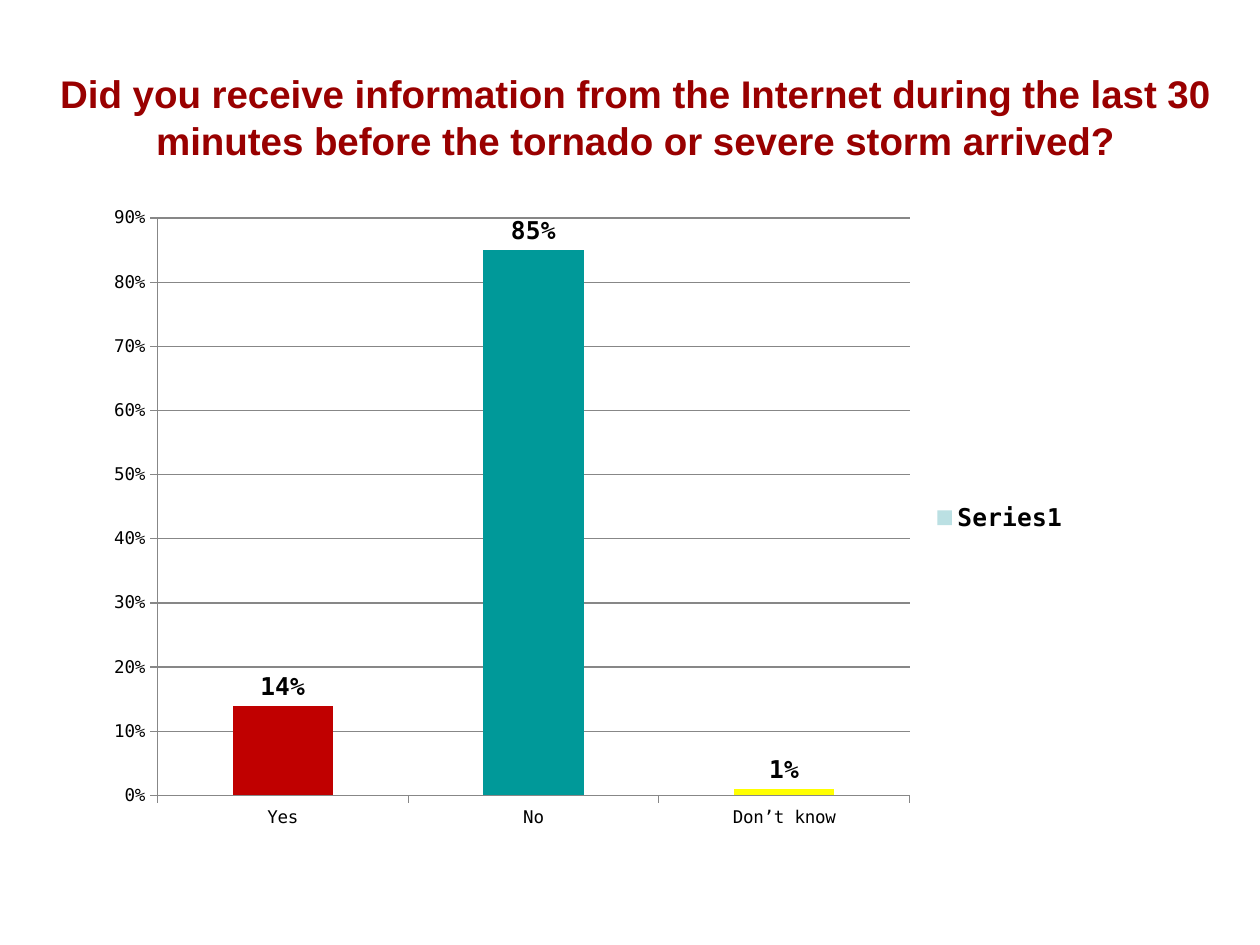
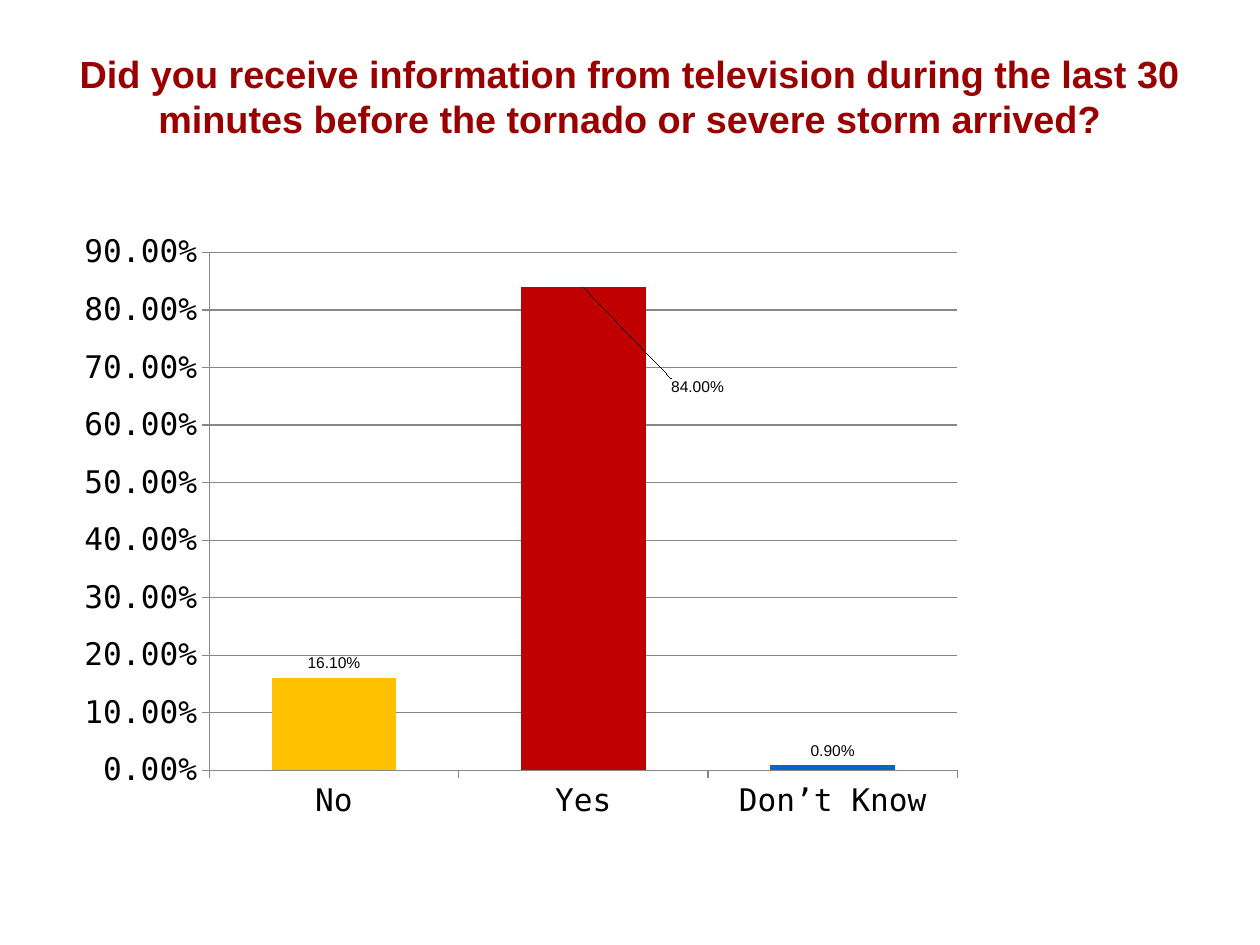
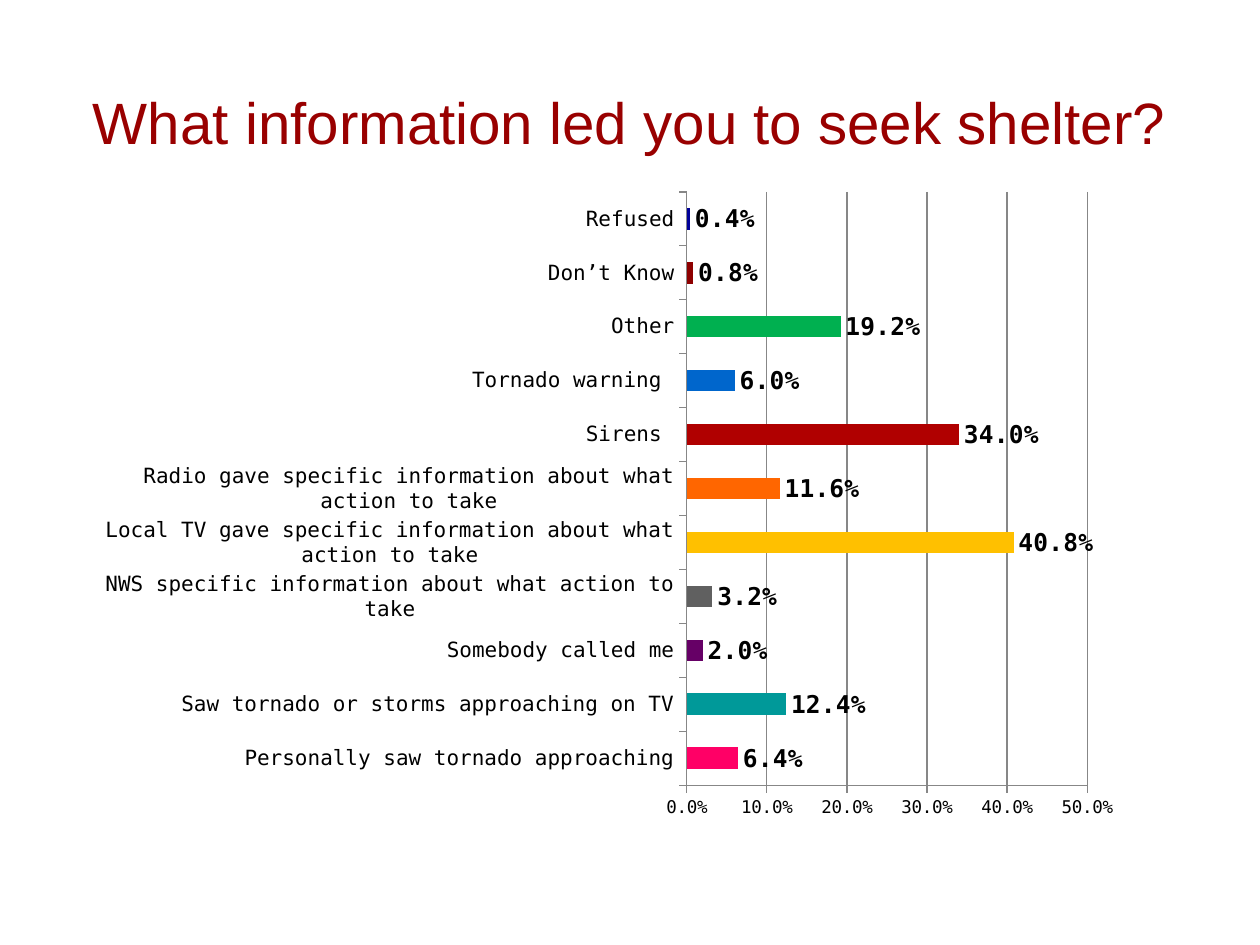
from lxml.etree import SubElement
from pptx import Presentation
from pptx.chart.data import CategoryChartData
from pptx.dml.color import RGBColor
from pptx.enum.chart import XL_CHART_TYPE, XL_LABEL_POSITION, XL_LEGEND_POSITION, XL_TICK_MARK
from pptx.enum.text import MSO_ANCHOR, MSO_AUTO_SIZE, PP_ALIGN
from pptx.oxml import parse_xml
from pptx.oxml.ns import nsdecls, qn
from pptx.util import Inches, Pt

TITLE_RED = RGBColor(0x99, 0x00, 0x00)
BLACK = RGBColor(0x00, 0x00, 0x00)
AXIS_GREY = RGBColor(0x87, 0x87, 0x87)
PALE_TEAL = RGBColor(0xBB, 0xE0, 0xE3)
RED = RGBColor(0xC0, 0x00, 0x00)
TEAL = RGBColor(0x00, 0x99, 0x99)
YELLOW = RGBColor(0xFF, 0xFF, 0x00)
AMBER = RGBColor(0xFF, 0xC0, 0x00)
BLUE = RGBColor(0x00, 0x66, 0xCC)
PINK = RGBColor(0xFF, 0x00, 0x66)
PURPLE = RGBColor(0x66, 0x00, 0x66)
GREY = RGBColor(0x60, 0x60, 0x60)
ORANGE = RGBColor(0xFF, 0x66, 0x00)
SIREN_RED = RGBColor(0xB0, 0x00, 0x00)
GREEN = RGBColor(0x00, 0xB0, 0x50)
DARK_RED = RGBColor(0x8E, 0x00, 0x00)
NAVY = RGBColor(0x00, 0x00, 0x99)

TITLE_FONT = "Arial"
CHART_FONT = "DejaVu Sans Mono"
BOLD_LABELS = {"name": CHART_FONT, "size": Pt(14), "bold": True}
SMALL_LABELS = {"name": TITLE_FONT, "size": Pt(9), "bold": False}

INTERNET_ANSWERS = [("Yes", 0.14, RED), ("No", 0.85, TEAL), ("Don’t know", 0.01, YELLOW)]
TELEVISION_ANSWERS = [("No", 0.161, AMBER), ("Yes", 0.84, RED), ("Don’t Know", 0.009, BLUE)]
SHELTER_REASONS = [
    ("Personally saw tornado approaching", 0.064, PINK),
    ("Saw tornado or storms approaching on TV", 0.124, TEAL),
    ("Somebody called me", 0.02, PURPLE),
    ("NWS specific information about what action to take", 0.032, GREY),
    ("Local TV gave specific information about what action to take", 0.408, AMBER),
    ("Radio gave specific information about what action to take", 0.116, ORANGE),
    ("Sirens ", 0.34, SIREN_RED),
    ("Tornado warning ", 0.06, BLUE),
    ("Other", 0.192, GREEN),
    ("Don’t Know", 0.008, DARK_RED),
    ("Refused", 0.004, NAVY),
]


def set_font(font, formats):
    for name, value in formats.items():
        setattr(font, name, value)
    font.color.rgb = BLACK


def place(shape, box):
    for name, value in zip(("left", "top", "width", "height"), box):
        setattr(shape, name, Inches(value))


def add_question(presentation, text, box, size, bold=True, bottom_margin=0.05):
    slide = presentation.slides.add_slide(presentation.slide_layouts[5])
    title = slide.shapes.title
    place(title, box)
    frame = title.text_frame
    frame.text = text
    formats = {
        "word_wrap": True,
        "auto_size": MSO_AUTO_SIZE.NONE,
        "vertical_anchor": MSO_ANCHOR.MIDDLE,
        "margin_bottom": Inches(bottom_margin),
    }
    for name, value in formats.items():
        setattr(frame, name, value)
    paragraph = frame.paragraphs[0]
    paragraph.alignment = PP_ALIGN.CENTER
    for name, value in {"name": TITLE_FONT, "size": Pt(size), "bold": bold}.items():
        setattr(paragraph.font, name, value)
    paragraph.font.color.rgb = TITLE_RED
    return slide


def format_axes(chart, number_format, maximum, category_size):
    category_axis, value_axis = chart.category_axis, chart.value_axis
    for axis in (category_axis, value_axis):
        axis.major_tick_mark = XL_TICK_MARK.OUTSIDE
        axis.minor_tick_mark = XL_TICK_MARK.NONE
        axis.format.line.color.rgb = AXIS_GREY
    category_axis.has_major_gridlines = False
    set_font(category_axis.tick_labels.font, {"name": CHART_FONT, "size": Pt(category_size)})
    scale = {"minimum_scale": 0, "maximum_scale": maximum, "major_unit": 0.1, "has_major_gridlines": True}
    for name, value in scale.items():
        setattr(value_axis, name, value)
    value_axis.major_gridlines.format.line.color.rgb = AXIS_GREY
    value_axis.tick_labels.number_format = number_format
    value_axis.tick_labels.number_format_is_linked = False


def add_answer_chart(slide, box, answers, series_name, number_format, maximum, size=10,
                     category_size=10, label_font=BOLD_LABELS, gap=150,
                     chart_type=XL_CHART_TYPE.COLUMN_CLUSTERED):
    data = CategoryChartData(number_format=number_format)
    data.categories = [answer for answer, _, _ in answers]
    data.add_series(series_name, [share for _, share, _ in answers])
    chart = slide.shapes.add_chart(chart_type, *map(Inches, box), data).chart
    chart.has_title = False
    chart.has_legend = False
    set_font(chart.font, {"name": CHART_FONT, "size": Pt(size)})
    format_axes(chart, number_format, maximum, category_size)
    plot = chart.plots[0]
    plot.gap_width = gap
    plot.vary_by_categories = False
    series = plot.series[0]
    series.format.fill.solid()
    series.format.fill.fore_color.rgb = PALE_TEAL
    for index, (_, _, color) in enumerate(answers):
        fill = series.points[index].format.fill
        fill.solid()
        fill.fore_color.rgb = color
    labels = series.data_labels
    formats = {
        "show_value": True,
        "number_format": number_format,
        "number_format_is_linked": False,
        "position": XL_LABEL_POSITION.OUTSIDE_END,
    }
    for name, value in formats.items():
        setattr(labels, name, value)
    set_font(labels.font, label_font)
    return chart


def make_layout(**settings):
    layout = parse_xml(f"<c:layout {nsdecls('c')}/>")
    manual = SubElement(layout, qn("c:manualLayout"))
    for name, value in settings.items():
        SubElement(manual, qn(f"c:{name}")).set("val", str(value))
    return layout


def set_plot_area(chart, x, y, w, h):
    plot_area = chart.plots[0]._element.getparent()
    for old_layout in plot_area.findall(qn("c:layout")):
        plot_area.remove(old_layout)
    plot_area.insert(0, make_layout(layoutTarget="inner", xMode="edge", yMode="edge", x=x, y=y, w=w, h=h))


def shift_label(chart, index, x, y):
    series = chart.plots[0].series[0]
    label = series.points[index].data_label
    set_font(label.font, SMALL_LABELS)
    label.position = XL_LABEL_POSITION.OUTSIDE_END
    for element in series.data_labels._element.findall(qn("c:dLbl")):
        element.insert(1, make_layout(x=x, y=y))


def add_legend(chart):
    chart.has_legend = True
    chart.legend.position = XL_LEGEND_POSITION.RIGHT
    chart.legend.include_in_layout = False
    set_font(chart.legend.font, BOLD_LABELS)


def build_internet_slide(presentation):
    slide = add_question(
        presentation,
        "Did you receive information from the Internet during the last 30 minutes "
        "before the tornado or severe storm arrived?",
        (0.17, 0.3, 9.75, 1.25), 22)
    chart = add_answer_chart(slide, (0.75, 1.55, 7.83, 5.12), INTERNET_ANSWERS, "Series1", "0%", 0.9)
    add_legend(chart)


def build_television_slide(presentation):
    slide = add_question(
        presentation,
        "Did you receive information from television during the last 30 minutes "
        "before the tornado or severe storm arrived?",
        (0, 0.3, 10, 1.25), 21.6, bottom_margin=0.38)
    chart = add_answer_chart(slide, (0.67, 1.67, 8.33, 4.83), TELEVISION_ANSWERS, "Series 1", "0.00%", 0.9,
                             size=18, category_size=18, label_font=SMALL_LABELS, gap=100)
    set_plot_area(chart, 0.11, 0.07, 0.72, 0.86)
    shift_label(chart, 1, 0.11, 0.19)


def build_shelter_slide(presentation):
    slide = add_question(presentation, "What information led you to seek shelter?",
                         (0.5, 0.65, 9, 0.62), 33.3, bold=False)
    add_answer_chart(slide, (0.67, 1.42, 8.33, 5.17), SHELTER_REASONS, "Series 1", "0.0%", 0.5,
                     category_size=12, chart_type=XL_CHART_TYPE.BAR_CLUSTERED)


def main():
    presentation = Presentation()
    presentation.slide_width = Inches(10)
    presentation.slide_height = Inches(7.5)
    for build_slide in (build_internet_slide, build_television_slide, build_shelter_slide):
        build_slide(presentation)
    presentation.save("out.pptx")


if __name__ == "__main__":
    main()
